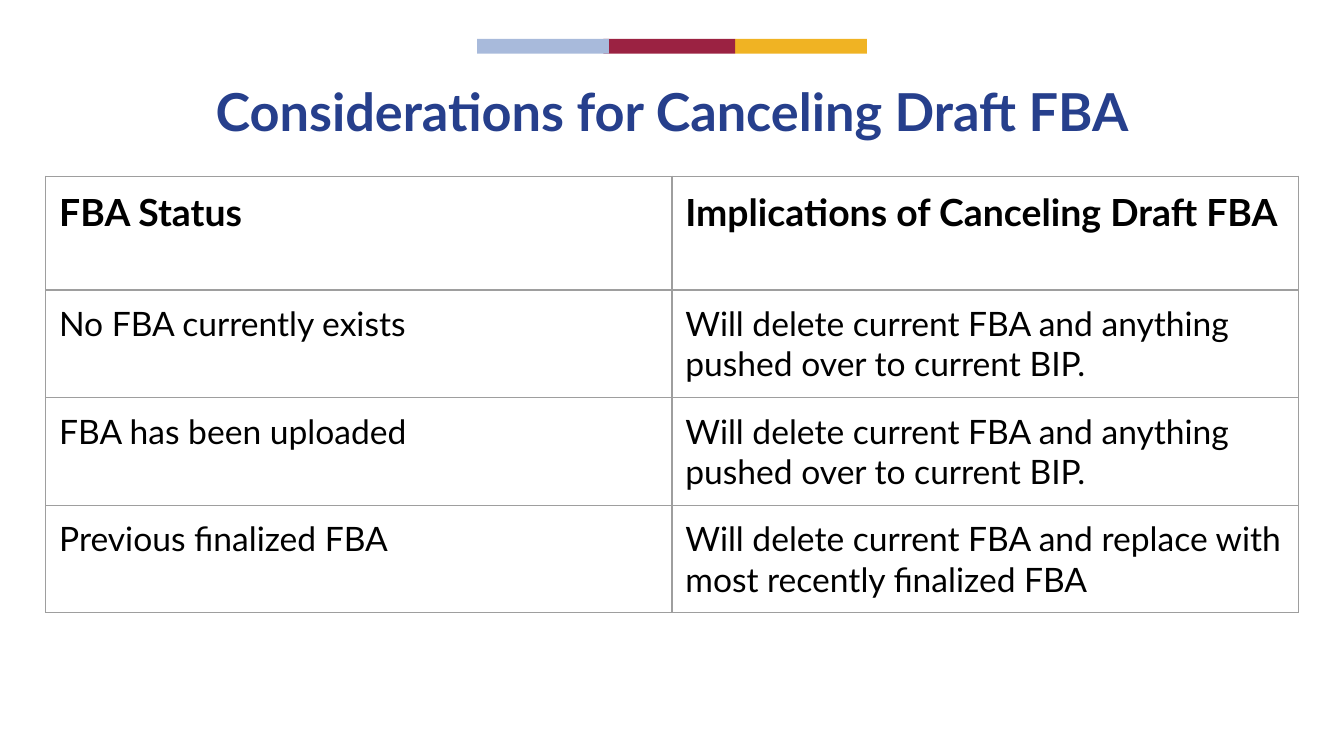
from lxml.etree import SubElement
from pptx import Presentation
from pptx.dml.color import RGBColor
from pptx.enum.shapes import MSO_SHAPE
from pptx.enum.text import MSO_ANCHOR, MSO_AUTO_SIZE, PP_ALIGN
from pptx.oxml.ns import qn
from pptx.util import Pt

COLORS = {
    "blue": "A8BADB",
    "red": "9B2242",
    "yellow": "F0B323",
    "title": "263F8C",
    "text": "000000",
    "border": "9E9E9E",
}
FONT = "Lato"
INSET = Pt(7.2)
MARGIN_LEFT = Pt(24.5)
CONTENT_WIDTH = Pt(671)
HEADER_HEIGHT = Pt(61)
ROW_HEIGHT = Pt(57.6)

# Left edges in points, from back to front
STRIPES = [("yellow", 393.8), ("red", 323.3), ("blue", 255.6)]

TITLE = "Considerations for Canceling Draft FBA"
ROWS = [
    ("FBA Status", "Implications of Canceling Draft FBA"),
    ("No FBA currently exists",
     "Will delete current FBA and anything pushed over to current BIP."),
    ("FBA has been uploaded",
     "Will delete current FBA and anything pushed over to current BIP."),
    ("Previous finalized FBA",
     "Will delete current FBA and replace with most recently finalized FBA"),
]


def rgb(name):
    return RGBColor.from_string(COLORS[name])


def set_attributes(target, values):
    for attribute, value in values.items():
        setattr(target, attribute, value)


def format_font(paragraph, size, bold, color):
    font = paragraph.runs[0].font
    set_attributes(font, {"name": FONT, "size": Pt(size), "bold": bold})
    font.color.rgb = rgb(color)


def margins():
    return {f"margin_{side}": INSET for side in ("left", "top", "right", "bottom")}


def add_stripe(slide, color, left):
    stripe = slide.shapes.add_shape(
        MSO_SHAPE.RECTANGLE, Pt(left), Pt(20.9), Pt(70.6), Pt(7.9))
    stripe.shadow.inherit = False
    stripe.fill.solid()
    stripe.fill.fore_color.rgb = rgb(color)
    stripe.line.fill.background()


def fill_title(slide):
    title = slide.shapes.title
    set_attributes(title, {"left": MARGIN_LEFT, "top": Pt(35.3),
                           "width": CONTENT_WIDTH, "height": Pt(45.4)})
    frame = title.text_frame
    frame.text = TITLE
    set_attributes(frame, margins() | {
        "word_wrap": True,
        "vertical_anchor": MSO_ANCHOR.TOP,
        "auto_size": MSO_AUTO_SIZE.NONE,
    })
    heading = frame.paragraphs[0]
    set_attributes(heading, {"alignment": PP_ALIGN.CENTER, "line_spacing": 1.0,
                             "space_before": Pt(0)})
    format_font(heading, 28, True, "title")


def add_borders(cell):
    """Draw all four cell edges; the schema wants them before the fill."""
    properties = cell._tc.get_or_add_tcPr()
    for position, edge in enumerate(("lnL", "lnR", "lnT", "lnB")):
        border = SubElement(properties, qn(f"a:{edge}"), w=str(Pt(0.75)))
        fill = SubElement(border, qn("a:solidFill"))
        SubElement(fill, qn("a:srgbClr"), val=COLORS["border"])
        properties.insert(position, border)


def fill_cell(cell, words, is_header):
    cell.text = words
    set_attributes(cell, margins() | {"vertical_anchor": MSO_ANCHOR.TOP})
    format_font(cell.text_frame.paragraphs[0],
                20 if is_header else 18, is_header, "text")
    cell.fill.background()
    add_borders(cell)


def add_status_table(slide):
    height = HEADER_HEIGHT + ROW_HEIGHT * (len(ROWS) - 1)
    table = slide.shapes.add_table(
        len(ROWS), len(ROWS[0]), MARGIN_LEFT, Pt(94.4), CONTENT_WIDTH, height).table
    set_attributes(table, {"first_row": False, "horz_banding": False})
    for row_index, row in enumerate(ROWS):
        is_header = row_index == 0
        table.rows[row_index].height = HEADER_HEIGHT if is_header else ROW_HEIGHT
        for column_index, words in enumerate(row):
            fill_cell(table.cell(row_index, column_index), words, is_header)


def main():
    presentation = Presentation()
    set_attributes(presentation, {"slide_width": Pt(720), "slide_height": Pt(405)})
    slide = presentation.slides.add_slide(presentation.slide_layouts[5])
    for color, left in STRIPES:
        add_stripe(slide, color, left)
    add_status_table(slide)
    fill_title(slide)
    presentation.save("out.pptx")


if __name__ == "__main__":
    main()
